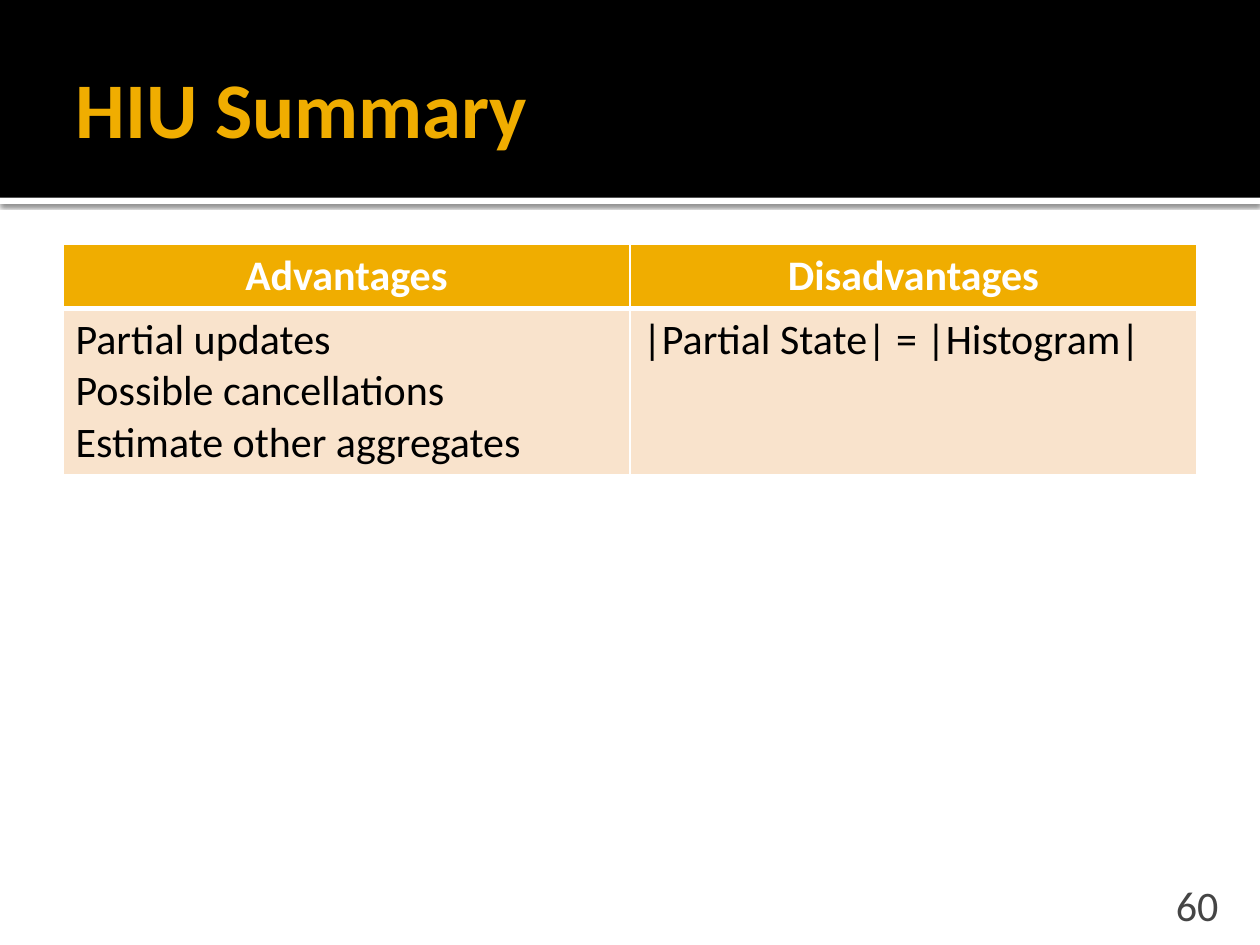
import pptx
import pptx.dml.color
import pptx.enum.shapes
import pptx.enum.text
import pptx.oxml
import pptx.oxml.ns
import pptx.util

Pt = pptx.util.Pt
RGB = pptx.dml.color.RGBColor
ALIGN = pptx.enum.text.PP_ALIGN
ANCHOR = pptx.enum.text.MSO_ANCHOR

BLACK = RGB(0x00, 0x00, 0x00)
WHITE = RGB(0xFF, 0xFF, 0xFF)
GOLD = RGB(0xF0, 0xAD, 0x00)
PEACH = RGB(0xF9, 0xE3, 0xCC)
GRAY = RGB(0x45, 0x45, 0x45)
FONT = "Calibri"

ROWS = [
    ["Advantages", "Disadvantages"],
    ["Partial updates\nPossible cancellations\nEstimate other aggregates",
     "|Partial State| = |Histogram|"],
]


def parse(xml):
    return pptx.oxml.parse_xml(xml.replace(">", " %s>" % pptx.oxml.ns.nsdecls("a"), 1))


def write(tf, text, size=24, color=BLACK, bold=False, align=ALIGN.LEFT):
    """Fill a text frame, one paragraph for each line of text."""
    tf.word_wrap = True
    for i, line in enumerate(text.split("\n")):
        p = tf.paragraphs[0] if i == 0 else tf.add_paragraph()
        p.alignment = align
        r = p.add_run()
        r.text = line
        r.font.name, r.font.size, r.font.bold = FONT, Pt(size), bold
        r.font.color.rgb = color


def set_insets(tf, left, top, right, bottom):
    tf.margin_left, tf.margin_top = Pt(left), Pt(top)
    tf.margin_right, tf.margin_bottom = Pt(right), Pt(bottom)


def add_bar(s, x, y, w, h, color):
    sp = s.shapes.add_shape(pptx.enum.shapes.MSO_SHAPE.RECTANGLE,
                            Pt(x), Pt(y), Pt(w), Pt(h))
    sp.shadow.inherit = False
    sp.fill.solid()
    sp.fill.fore_color.rgb = color
    sp.line.fill.background()
    return sp


def add_header(s, x, y, w, h, text):
    # White rule with a soft shadow, under the black band
    rule = add_bar(s, x, y + h, w, 3.6, WHITE)
    effects = rule.element.spPr.find(pptx.oxml.ns.qn("a:effectLst"))
    effects.append(parse(
        '<a:outerShdw blurRad="%d" dist="%d" dir="5400000" algn="t" rotWithShape="0">'
        '<a:srgbClr val="000000"><a:alpha val="60000"/></a:srgbClr></a:outerShdw>'
        % (Pt(2.5), Pt(0.8))))
    add_bar(s, x, y, w, h, BLACK)

    # Title, brought in front of the band
    title = s.shapes.title
    title.element.getparent().append(title.element)
    title.left, title.top = Pt(x + 36), Pt(y + 12)
    title.width, title.height = Pt(w - 72), Pt(98.6)
    tf = title.text_frame
    tf.vertical_anchor = ANCHOR.MIDDLE
    set_insets(tf, 7.2, 3.6, 3.6, 3.6)
    write(tf, text, size=45, color=GOLD, bold=True)


def set_borders(cell, **widths):
    tc_pr = cell._tc.get_or_add_tcPr()
    for i, (side, width) in enumerate(widths.items()):
        tc_pr.insert(i, parse(
            '<a:ln%s w="%d"><a:solidFill><a:srgbClr val="%s"/></a:solidFill></a:ln%s>'
            % (side, Pt(width), WHITE, side)))


def add_summary_table(s, x, y, w, row_heights):
    table = s.shapes.add_table(len(ROWS), len(ROWS[0]), Pt(x), Pt(y),
                               Pt(w), Pt(sum(row_heights))).table
    for i, (row, height) in enumerate(zip(ROWS, row_heights)):
        table.rows[i].height = Pt(height)
        head = i == 0
        for j, text in enumerate(row):
            cell = table.cell(i, j)
            cell.fill.solid()
            cell.fill.fore_color.rgb = GOLD if head else PEACH
            write(cell.text_frame, text, color=WHITE if head else BLACK,
                  bold=head, align=ALIGN.CENTER if head else ALIGN.LEFT)
            set_borders(cell, L=1, R=1, T=1 if head else 3, B=3 if head else 1)


def add_page_number(s, x, y, w, h, text):
    tf = s.shapes.add_textbox(Pt(x), Pt(y), Pt(w), Pt(h)).text_frame
    tf.vertical_anchor = ANCHOR.BOTTOM
    set_insets(tf, 7.2, 3.6, 7.2, 0)
    write(tf, text, color=GRAY, align=ALIGN.RIGHT)


def main():
    prs = pptx.Presentation()
    prs.slide_width, prs.slide_height = Pt(720), Pt(540)
    s = prs.slides.add_slide(prs.slide_layouts[5])
    add_header(s, 0, 0, 720, 113, "HIU Summary")
    add_summary_table(s, 36, 139.7, 648, [36.5, 95])
    add_page_number(s, 645.8, 509.8, 57.6, 21.6, "60")
    prs.save("out.pptx")


if __name__ == "__main__":
    main()
